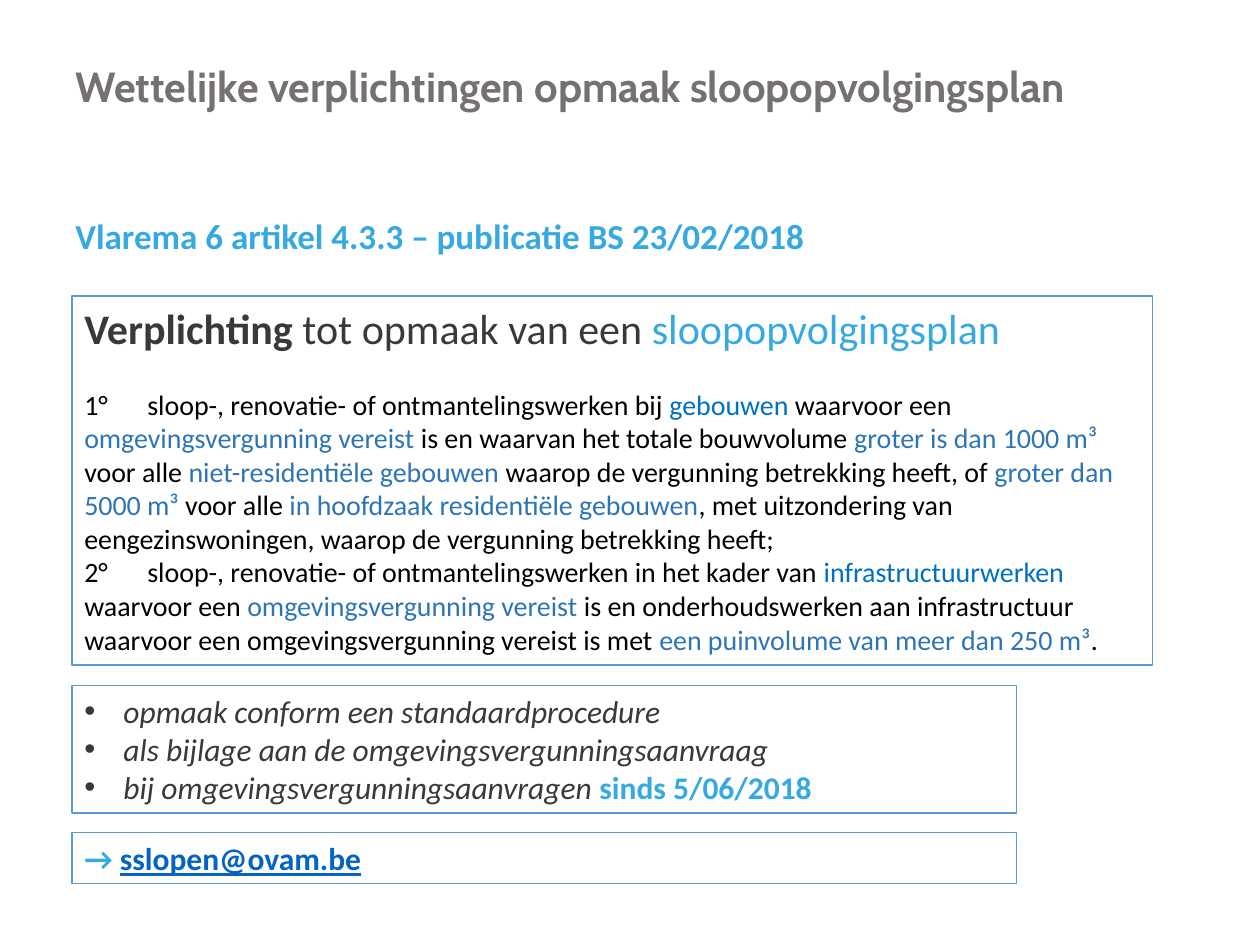
from lxml import etree
from pptx import Presentation, util as u
from pptx.dml.color import RGBColor
from pptx.enum import shapes, text
from pptx.oxml import ns

GREY = RGBColor(0x76, 0x71, 0x71)
DARK = RGBColor(0x3B, 0x38, 0x38)
BLACK = RGBColor(0, 0, 0)
SKY = RGBColor(0x36, 0xA9, 0xE1)
BLUE = RGBColor(0x00, 0x70, 0xC0)
STEEL = RGBColor(0x2E, 0x75, 0xB6)
LINK = RGBColor(0x05, 0x63, 0xC1)
BORDER = RGBColor(0x5B, 0x9B, 0xD5)

FRAME_LEFT = 1.45


class Style:
    """Holds the current slide and the look of its elements."""

    def __init__(self, page, font="Calibri"):
        self.page = page
        self.font = font

    def prepare(self, box, anchor):
        frame = box.text_frame
        frame.word_wrap = True
        frame.vertical_anchor = anchor
        frame.margin_left = frame.margin_right = u.Cm(0.25)
        frame.margin_top = frame.margin_bottom = u.Cm(0.13)
        return frame

    def heading(self, left, top, width, height, words, size, color,
                font=None, anchor=text.MSO_ANCHOR.TOP):
        box = self.page.shapes.add_textbox(
            u.Cm(left), u.Cm(top), u.Cm(width), u.Cm(height))
        para = self.prepare(box, anchor).paragraphs[0]
        para.line_spacing = 0.9
        self.span(para, words, size, color, font=font, bold=True)

    def framed(self, top, width, height):
        box = self.page.shapes.add_shape(
            shapes.MSO_SHAPE.RECTANGLE,
            u.Cm(FRAME_LEFT), u.Cm(top), u.Cm(width), u.Cm(height))
        box.shadow.inherit = False
        box.fill.background()
        box.line.color.rgb = BORDER
        box.line.width = u.Pt(0.75)
        return self.prepare(box, text.MSO_ANCHOR.TOP)

    def para(self, frame, bullet=False):
        first = frame.paragraphs[0]
        para = frame.add_paragraph() if first.runs else first
        para.alignment = text.PP_ALIGN.LEFT
        if bullet:
            props = para._p.get_or_add_pPr()
            indent = u.Cm(0.79)
            props.set("marL", str(indent))
            props.set("indent", str(-indent))
            etree.SubElement(props, ns.qn("a:buFont"), typeface="Arial")
            etree.SubElement(props, ns.qn("a:buChar"), char="•")
        return para

    def span(self, para, words, size, color, font=None,
             bold=False, italic=False, underline=False):
        run = para.add_run()
        run.text = words
        run.font.name = font or self.font
        run.font.size = u.Pt(size)
        run.font.color.rgb = color
        run.font.bold = bold
        run.font.italic = italic
        run.font.underline = underline


def main():
    deck = Presentation()
    deck.slide_width, deck.slide_height = u.Cm(25.4), u.Cm(19.05)
    style = Style(deck.slides.add_slide(deck.slide_layouts[6]))

    # Title and subtitle
    style.heading(1.27, 0.91, 22.61, 1.78,
                  "Wettelijke verplichtingen opmaak sloopopvolgingsplan",
                  24, GREY, font="Cabin", anchor=text.MSO_ANCHOR.MIDDLE)
    style.heading(1.27, 4.29, 23.75, 2.06,
                  "Vlarema 6 artikel 4.3.3 – publicatie BS 23/02/2018",
                  20, SKY)

    # Obligation and its two cases
    frame = style.framed(5.97, 21.79, 7.44)
    para = style.para(frame)
    para.space_after = u.Pt(19.5)
    style.span(para, "Verplichting ", 24, DARK, bold=True)
    style.span(para, "tot opmaak van een ", 24, DARK)
    style.span(para, "sloopopvolgingsplan", 24, SKY)

    cases = [
        [("1°\tsloop-, renovatie- of ontmantelingswerken bij ", BLACK),
         ("gebouwen", BLUE),
         (" waarvoor een ", BLACK),
         ("omgevingsvergunning vereist ", STEEL),
         ("is en waarvan het totale bouwvolume ", BLACK),
         ("groter is dan 1000 m³ ", STEEL),
         ("voor alle ", BLACK),
         ("niet-residentiële gebouwen ", STEEL),
         ("waarop de vergunning betrekking heeft, of ", BLACK),
         ("groter dan 5000 m³ ", STEEL),
         ("voor alle ", BLACK),
         ("in hoofdzaak residentiële gebouwen", STEEL),
         (", met uitzondering van eengezinswoningen, "
          "waarop de vergunning betrekking heeft;", BLACK)],
        [("2°\tsloop-, renovatie- of ontmantelingswerken "
          "in het kader van ", BLACK),
         ("infrastructuurwerken", BLUE),
         (" waarvoor een ", BLACK),
         ("omgevingsvergunning vereist ", STEEL),
         ("is en onderhoudswerken aan infrastructuur waarvoor een "
          "omgevingsvergunning vereist is met ", BLACK),
         ("een puinvolume van meer dan 250 m³", STEEL),
         (".", BLACK)],
    ]
    for case in cases:
        para = style.para(frame)
        for words, color in case:
            style.span(para, words, 16, color)

    # Conditions
    frame = style.framed(13.82, 19.05, 2.57)
    for words in ("opmaak conform een standaardprocedure",
                  "als bijlage aan de omgevingsvergunningsaanvraag",
                  "bij omgevingsvergunningsaanvragen "):
        para = style.para(frame, bullet=True)
        style.span(para, words, 18, DARK, italic=True)
    style.span(para, "sinds 5/06/2018", 18, SKY, bold=True)

    # Contact
    para = style.para(style.framed(16.79, 19.05, 1.02))
    style.span(para, "→ ", 18, SKY, bold=True)
    style.span(para, "sslopen@ovam.be", 18, LINK, bold=True, underline=True)

    deck.save("out.pptx")


if __name__ == "__main__":
    main()
